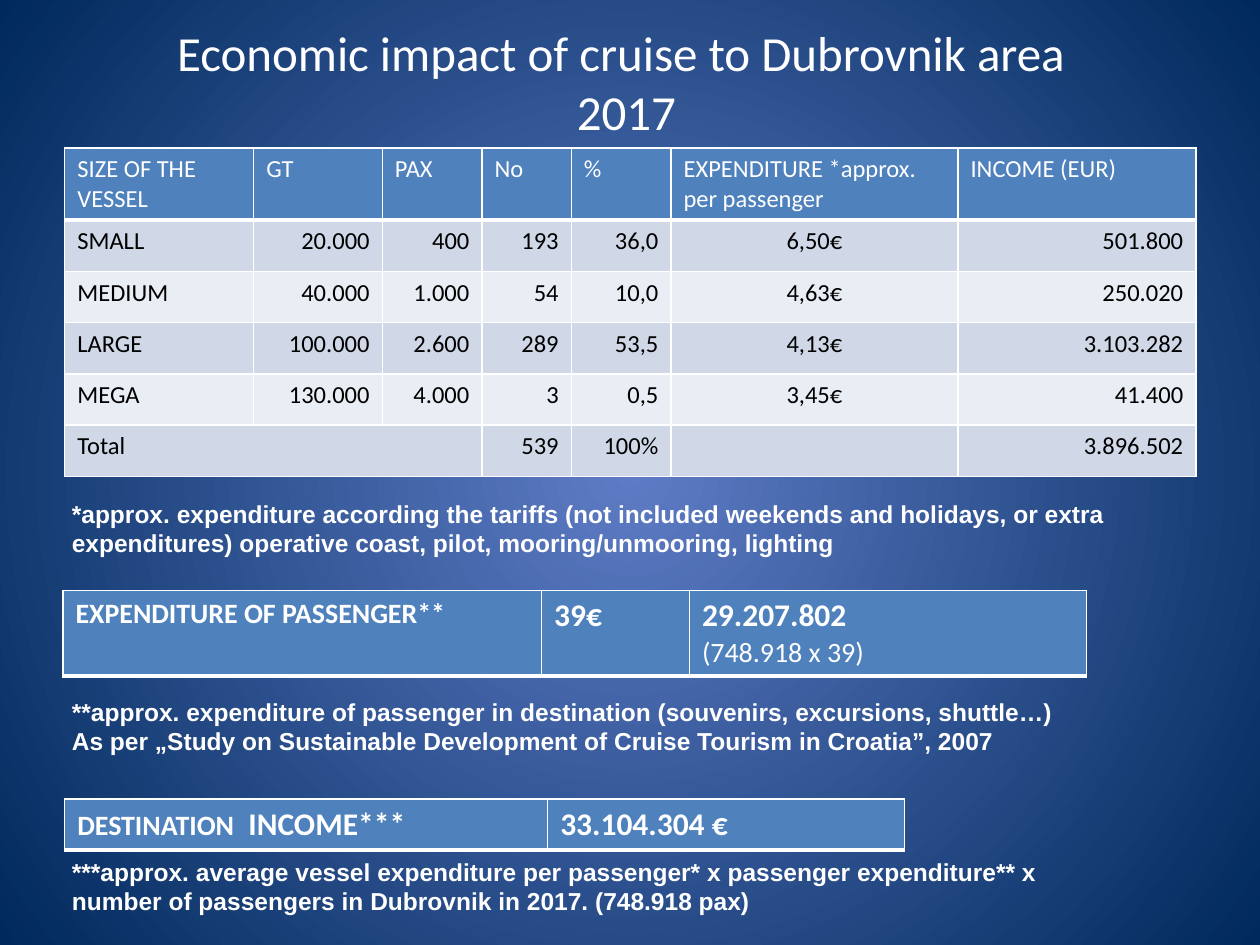
from lxml import etree
from pptx import Presentation
from pptx.dml.color import RGBColor
from pptx.enum.text import MSO_ANCHOR, MSO_AUTO_SIZE, PP_ALIGN
from pptx.oxml import parse_xml
from pptx.oxml.ns import nsdecls, qn
from pptx.util import Pt

LEFT, CENTER, RIGHT = PP_ALIGN.LEFT, PP_ALIGN.CENTER, PP_ALIGN.RIGHT
MIDDLE = MSO_ANCHOR.MIDDLE
FIT_SHAPE, FIT_NONE = MSO_AUTO_SIZE.SHAPE_TO_FIT_TEXT, MSO_AUTO_SIZE.NONE

WHITE, BLACK = "FFFFFF", "000000"
HEADER, BAND_DARK, BAND_LIGHT = "4F81BD", "D0D8E8", "E9EDF4"
GLOW, NAVY = "5E7CC5", "00295C"

VESSEL_COLS = [108, 73.5, 57, 51, 57, 164, 136]
VESSEL_ALIGN = [LEFT, RIGHT, RIGHT, RIGHT, RIGHT, CENTER, RIGHT]
VESSEL_ROWS = [
    ["SIZE OF THE VESSEL", "GT", "PAX", "No", "%",
     "EXPENDITURE *approx.\nper passenger", "INCOME (EUR)"],
    ["SMALL", "20.000", "400", "193", "36,0", "6,50€", "501.800"],
    ["MEDIUM", "40.000", "1.000", "54", "10,0", "4,63€", "250.020"],
    ["LARGE", "100.000", "2.600", "289", "53,5", "4,13€", "3.103.282"],
    ["MEGA", "130.000", "4.000", "3", "0,5", "3,45€", "41.400"],
    ["Total", "", "", "539", "100%", "", "3.896.502"],
]

# Each cell is a list of paragraphs, each a list of (text, size, bold) runs
PASSENGER_CELLS = [
    [[("EXPENDITURE OF PASSENGER**", 16, True)]],
    [[("39€", 18, True)]],
    [[("29.207.802", 18, True)], [("(748.918 x 39)", 16, False)]],
]
DESTINATION_CELLS = [
    [[("DESTINATION", 16, True), ("  INCOME***", 18, True)]],
    [[("33.104.304 €", 18, True)]],
]

NOTES = [
    ((34, 281.5, 632, 41),
     ["*approx. expenditure according the tariffs (not included weekends and "
      "holidays, or extra expenditures) operative coast, pilot, "
      "mooring/unmooring, lighting"]),
    ((34, 394.5, 632, 41),
     ["**approx. expenditure of passenger in destination (souvenirs, "
      "excursions, shuttle…)",
      "As per „Study on Sustainable Development of Cruise Tourism in "
      "Croatia”, 2007"]),
    ((34, 486, 601, 41),
     ["***approx. average vessel expenditure per passenger* x passenger "
      "expenditure** x number of passengers in Dubrovnik in 2017. "
      "(748.918 pax)"]),
]


def color(value):
    return RGBColor.from_string(value)


def style_font(font, name, size, ink, bold=False):
    font.name, font.size, font.bold = name, Pt(size), bold
    font.color.rgb = color(ink)


def paint_background(slide):
    fill = slide.background.fill
    fill.gradient()
    for stop, value in zip(fill.gradient_stops, (GLOW, NAVY)):
        stop.color.rgb = color(value)
    first, last = fill.gradient_stops
    first.position, last.position = 0, 1
    # Swap the linear direction for a circle from the centre
    grad = slide.background._cSld.find(".//" + qn("a:gradFill"))
    grad.replace(grad.find(qn("a:lin")), parse_xml(
        f'<a:path {nsdecls("a")} path="circle">'
        '<a:fillToRect l="50000" t="50000" r="50000" b="50000"/></a:path>'))


def add_title(slide, box, lines):
    sp = slide.shapes.title
    sp.left, sp.top, sp.width, sp.height = map(Pt, box)
    tf = sp.text_frame
    tf.text = "\n".join(lines)
    tf.word_wrap, tf.auto_size, tf.vertical_anchor = True, FIT_NONE, MIDDLE
    for p in tf.paragraphs:
        p.alignment = CENTER
        style_font(p.font, "Calibri", 28, WHITE)


def add_note(slide, box, lines):
    tf = slide.shapes.add_textbox(*map(Pt, box)).text_frame
    tf.word_wrap, tf.auto_size = True, FIT_SHAPE
    tf.text = "\n".join(lines)
    for p in tf.paragraphs:
        style_font(p.font, "Arial", 14, WHITE, True)


def format_cell(cell, fill, bottom=1):
    """Solid fill and white borders; bottom is the lower border in points."""
    cell.fill.solid()
    cell.fill.fore_color.rgb = color(fill)
    tc_pr = cell._tc.get_or_add_tcPr()
    for i, side in enumerate("LRTB"):
        width = Pt(bottom if side == "B" else 1)
        ln = etree.Element(qn(f"a:ln{side}"), w=str(width))
        solid = etree.SubElement(ln, qn("a:solidFill"))
        etree.SubElement(solid, qn("a:srgbClr"), val=WHITE)
        tc_pr.insert(i, ln)


def add_grid(slide, left, top, widths, heights):
    table = slide.shapes.add_table(
        len(heights), len(widths), Pt(left), Pt(top),
        Pt(sum(widths)), Pt(sum(heights))).table
    for column, width in zip(table.columns, widths):
        column.width = Pt(width)
    for row, height in zip(table.rows, heights):
        row.height = Pt(height)
    return table


def add_vessel_table(slide, left, top):
    table = add_grid(slide, left, top, VESSEL_COLS, [40] + [29.3] * 5)
    for r, texts in enumerate(VESSEL_ROWS):
        is_header = r == 0
        fill = HEADER if is_header else BAND_DARK if r % 2 else BAND_LIGHT
        for c, text in enumerate(texts):
            cell = table.cell(r, c)
            cell.text = text
            format_cell(cell, fill, 3 if is_header else 1)
            for p in cell.text_frame.paragraphs:
                p.alignment = LEFT if is_header else VESSEL_ALIGN[c]
                style_font(p.font, "Calibri", 14, WHITE if is_header else BLACK)
    total = len(VESSEL_ROWS) - 1
    table.cell(total, 0).merge(table.cell(total, 2))


def add_summary_bar(slide, left, top, widths, height, cells):
    table = add_grid(slide, left, top, widths, [height])
    for c, paragraphs in enumerate(cells):
        cell = table.cell(0, c)
        format_cell(cell, HEADER, 3)
        tf = cell.text_frame
        for i, runs in enumerate(paragraphs):
            p = tf.add_paragraph() if i else tf.paragraphs[0]
            for text, size, bold in runs:
                run = p.add_run()
                run.text = text
                style_font(run.font, "Calibri", size, WHITE, bold)


def main():
    prs = Presentation()
    prs.slide_width, prs.slide_height = Pt(720), Pt(540)
    slide = prs.slides.add_slide(prs.slide_layouts[5])
    paint_background(slide)
    add_title(slide, (61, 21, 594, 51),
              ["Economic impact of cruise to Dubrovnik area ", "2017"])

    # Tables
    add_vessel_table(slide, 37, 84.5)
    add_summary_bar(slide, 36, 337.5, [273.5, 84.5, 227], 45.5, PASSENGER_CELLS)
    add_summary_bar(slide, 37, 456.5, [276, 204], 29.3, DESTINATION_CELLS)

    # Footnotes under each table
    for box, lines in NOTES:
        add_note(slide, box, lines)
    prs.save("out.pptx")


if __name__ == "__main__":
    main()
